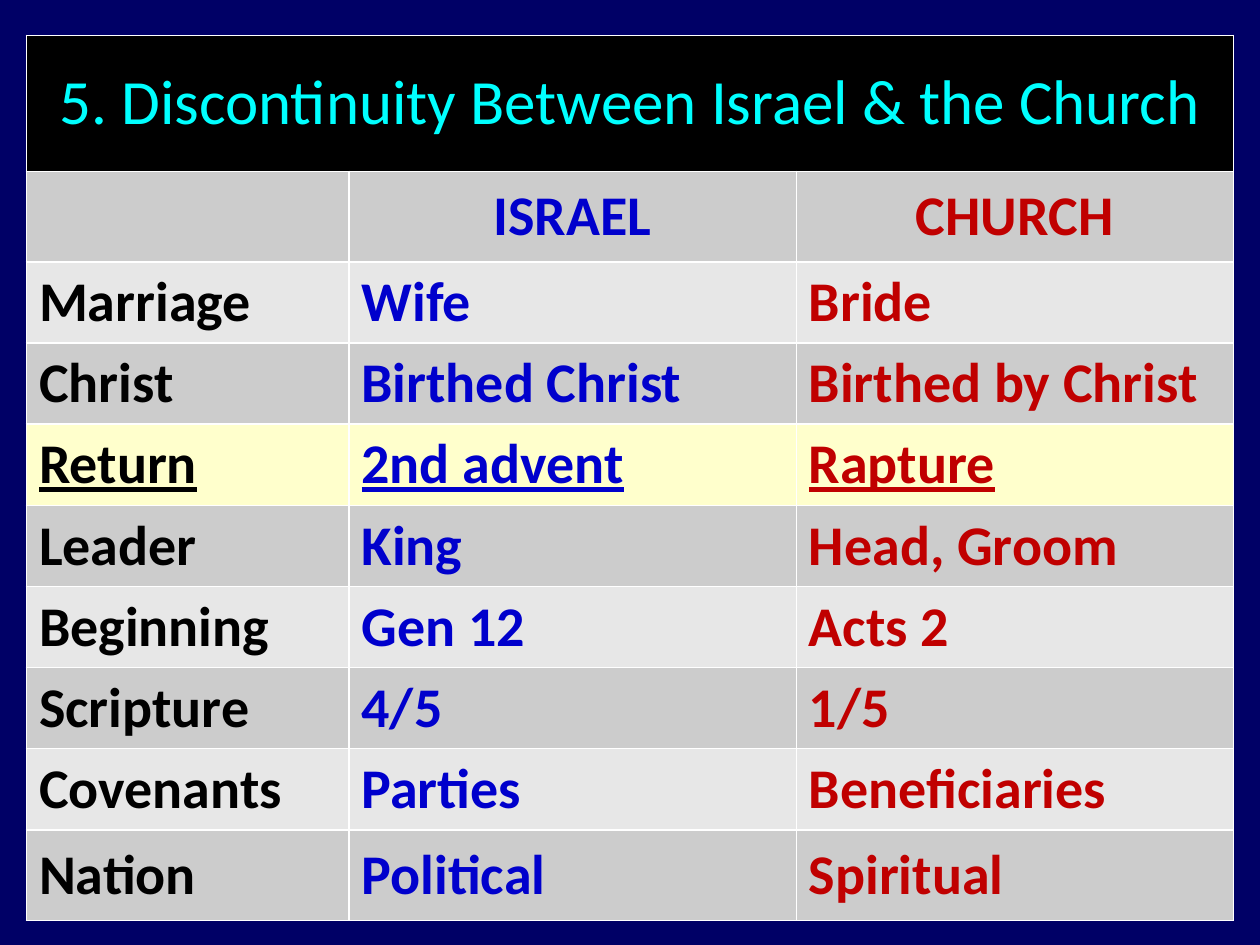
"""Build a slide with a table that sets Israel against the Church."""
from pptx import Presentation
from pptx.dml.color import RGBColor
from pptx.enum.text import MSO_ANCHOR, PP_ALIGN
from pptx.util import Inches, Pt

NAVY = RGBColor(0x00, 0x00, 0x66)
BLACK = RGBColor(0x00, 0x00, 0x00)
CYAN = RGBColor(0x00, 0xFF, 0xFF)
BLUE = RGBColor(0x00, 0x00, 0xCC)
RED = RGBColor(0xC0, 0x00, 0x00)
DARK = RGBColor(0xCC, 0xCC, 0xCC)
LIGHT = RGBColor(0xE7, 0xE7, 0xE7)
YELLOW = RGBColor(0xFF, 0xFF, 0xCC)

TITLE = "5. Discontinuity Between Israel & the Church"
ROWS = [
    ("", "ISRAEL", "CHURCH"),
    ("Marriage", "Wife", "Bride"),
    ("Christ", "Birthed Christ", "Birthed by Christ"),
    ("Return", "2nd advent", "Rapture"),
    ("Leader", "King", "Head, Groom"),
    ("Beginning", "Gen 12", "Acts 2"),
    ("Scripture", "4/5", "1/5"),
    ("Covenants", "Parties", "Beneficiaries"),
    ("Nation", "Political", "Spiritual"),
]
WIDTHS = [2.56, 3.55, 3.47]
HEIGHTS = [1.08, 0.72] + [0.64] * 7 + [0.72]
INKS = [BLACK, BLUE, RED]


def write(cell, text, size, ink, align):
    cell.text = text
    cell.vertical_anchor = MSO_ANCHOR.MIDDLE
    line = cell.text_frame.paragraphs[0]
    line.alignment = align
    line.font.name = "Calibri"
    line.font.size = Pt(size)
    line.font.color.rgb = ink
    return line.font


def paint(cell, color):
    cell.fill.solid()
    cell.fill.fore_color.rgb = color


deck = Presentation()
deck.slide_width, deck.slide_height = Inches(10), Inches(7.5)
slide = deck.slides.add_slide(deck.slide_layouts[6])
slide.background.fill.solid()
slide.background.fill.fore_color.rgb = NAVY

frame = slide.shapes.add_table(
    len(HEIGHTS), len(WIDTHS), Inches(0.21), Inches(0.28),
    Inches(sum(WIDTHS)), Inches(sum(HEIGHTS)))
table = frame.table
for column, width in zip(table.columns, WIDTHS):
    column.width = Inches(width)
for row, height in zip(table.rows, HEIGHTS):
    row.height = Inches(height)

head = table.cell(0, 0)
head.merge(table.cell(0, 2))
paint(head, BLACK)
write(head, TITLE, 36, CYAN, PP_ALIGN.CENTER).bold = False

for r, words in enumerate(ROWS, 1):
    key = words[0] == "Return"
    shade = YELLOW if key else DARK if r % 2 else LIGHT
    align = PP_ALIGN.CENTER if r == 1 else PP_ALIGN.LEFT
    for c, (word, ink) in enumerate(zip(words, INKS)):
        cell = table.cell(r, c)
        paint(cell, shade)
        if word:
            font = write(cell, word, 32, ink, align)
            font.bold = True
            font.underline = key

deck.save("out.pptx")
